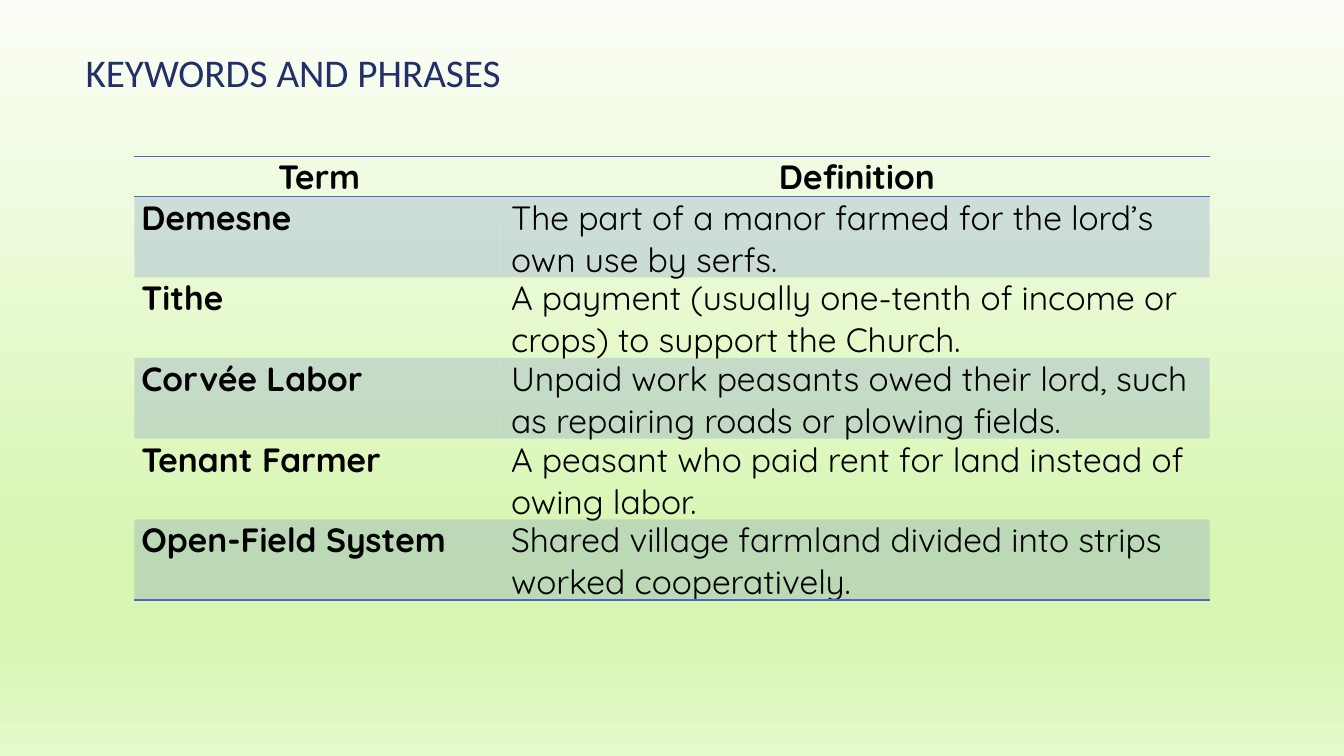
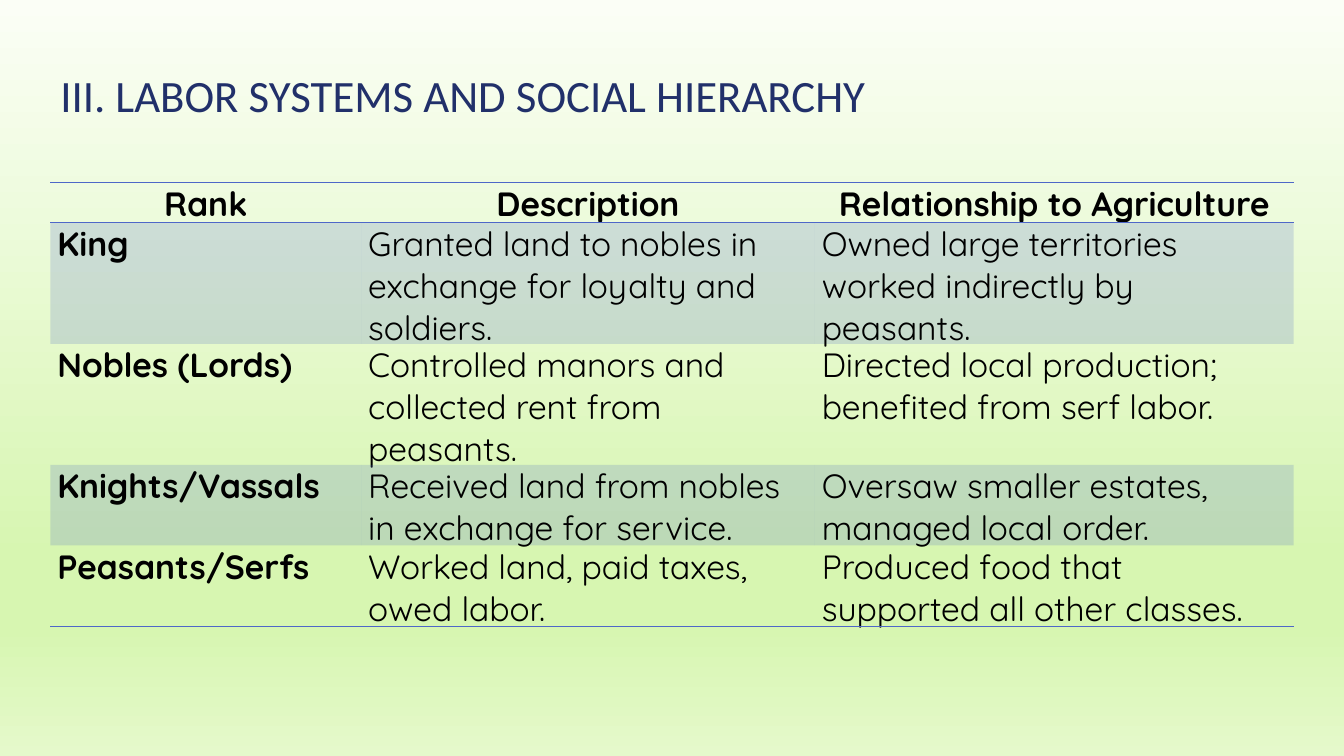
from copy import deepcopy

from lxml.etree import SubElement
from pptx import Presentation
from pptx.dml.color import RGBColor
from pptx.enum.text import MSO_ANCHOR, PP_ALIGN
from pptx.oxml.ns import qn
from pptx.util import Inches, Pt

COLORS = {
    "title": "21306A",
    "text": "000000",
    "accent": "4E67C8",
    "mist": "FBFEF6",
    "lime": "D7F6B1",
    "pale": "E5F9CB",
}
BACKDROP_STOPS = [(0, "mist"), (74, "lime"), (83, "lime"), (100, "pale")]
TITLE_FONT, TABLE_FONT = "Calibri", "Quicksand"
TABLE_SIZE = 24
BAND_OPACITY = 20
PLAIN_TABLE_STYLE = "{2D5ABB26-0587-4C30-8999-92F81FD0307C}"

# The slide is a grid of square units, twelve to the inch.
GRID_COLUMNS, GRID_ROWS = 160, 90
LINE_ROWS = 4.8

KEYWORDS = [
    ("Term", "Definition"),
    ("Demesne", "The part of a manor farmed for the lord’s own use by serfs."),
    ("Tithe", "A payment (usually one-tenth of income or crops) to support the Church."),
    ("Corvée Labor", "Unpaid work peasants owed their lord, such as repairing roads or plowing fields."),
    ("Tenant Farmer", "A peasant who paid rent for land instead of owing labor."),
    ("Open-Field System", "Shared village farmland divided into strips worked cooperatively."),
]
HIERARCHY = [
    ("Rank", "Description", "Relationship to Agriculture"),
    ("King", "Granted land to nobles in exchange for loyalty and soldiers.",
     "Owned large territories worked indirectly by peasants."),
    ("Nobles (Lords)", "Controlled manors and collected rent from peasants.",
     "Directed local production; benefited from serf labor."),
    ("Knights/Vassals", "Received land from nobles in exchange for service.",
     "Oversaw smaller estates, managed local order."),
    ("Peasants/Serfs", "Worked land, paid taxes, owed labor.",
     "Produced food that supported all other classes."),
]


def units(count):
    return Inches(count / 12)


def rgb(name):
    return RGBColor.from_string(COLORS[name])


def style_run(run, font_name, size, color, bold=False):
    run.font.name = font_name
    run.font.size = Pt(size)
    run.font.color.rgb = rgb(color)
    run.font.bold = bold


def paint_backdrop(master):
    """Give every slide the same vertical gradient."""
    fill = master.background.fill
    fill.gradient()
    fill.gradient_angle = 270
    stop_list = next(master.element.iter(qn("a:gsLst")))
    for stop in list(stop_list):
        stop_list.remove(stop)
    for position, color in BACKDROP_STOPS:
        stop = SubElement(stop_list, qn("a:gs"), pos=str(position * 1000))
        SubElement(stop, qn("a:srgbClr"), val=COLORS[color])


def add_title(slide, text, box, size):
    title = slide.shapes.add_textbox(*map(units, box))
    frame = title.text_frame
    frame.word_wrap = True
    frame.vertical_anchor = MSO_ANCHOR.BOTTOM
    frame.text = text
    paragraph = frame.paragraphs[0]
    paragraph.line_spacing = 0.9
    style_run(paragraph.runs[0], TITLE_FONT, size, "title")


def add_rules(cell, sides):
    """Draw accent lines on the given sides, before the cell is filled."""
    properties = cell._tc.get_or_add_tcPr()
    for side in sides:
        line = SubElement(properties, qn(f"a:ln{side}"), w=str(Pt(1)))
        fill = SubElement(line, qn("a:solidFill"))
        SubElement(fill, qn("a:srgbClr"), val=COLORS["accent"])


def fill_cell(cell, banded):
    if not banded:
        cell.fill.background()
        return
    cell.fill.solid()
    cell.fill.fore_color.rgb = rgb("accent")
    color = next(cell._tc.tcPr.iterchildren(qn("a:solidFill")))[0]
    SubElement(color, qn("a:alpha"), val=str(BAND_OPACITY * 1000))


def write_cell(cell, text, is_header, bold):
    cell.margin_left = cell.margin_right = Inches(0.07)
    cell.margin_top = cell.margin_bottom = 0
    cell.text_frame.text = text
    paragraph = cell.text_frame.paragraphs[0]
    paragraph.alignment = PP_ALIGN.CENTER if is_header else PP_ALIGN.LEFT
    style_run(paragraph.runs[0], TABLE_FONT, TABLE_SIZE, "text", bold)


def add_banded_table(slide, rows, origin, column_widths, row_lines):
    left, top = origin
    frame = slide.shapes.add_table(
        len(rows), len(column_widths), units(left), units(top),
        units(sum(column_widths)), units(sum(row_lines) * LINE_ROWS))
    table = frame.table
    table.first_row = table.horz_banding = False
    next(table._tbl.iter(qn("a:tableStyleId"))).text = PLAIN_TABLE_STYLE

    for column, width in zip(table.columns, column_widths):
        column.width = units(width)
    for row, lines in zip(table.rows, row_lines):
        row.height = units(lines * LINE_ROWS)

    for row_index, texts in enumerate(rows):
        is_header = row_index == 0
        sides = "TB" if is_header else "B" if row_index == len(rows) - 1 else ""
        for column_index, text in enumerate(texts):
            cell = table.cell(row_index, column_index)
            write_cell(cell, text, is_header, is_header or column_index == 0)
            add_rules(cell, sides)
            fill_cell(cell, row_index % 2 == 1)


def add_table_slide(presentation, title, title_box, title_size, **table):
    slide = presentation.slides.add_slide(presentation.slide_layouts[6])
    add_title(slide, title, title_box, title_size)
    add_banded_table(slide, **table)


def main():
    presentation = Presentation()
    presentation.slide_width = units(GRID_COLUMNS)
    presentation.slide_height = units(GRID_ROWS)
    paint_backdrop(presentation.slide_master)
    add_table_slide(
        presentation, "KEYWORDS AND PHRASES", (9, 2.64, 128, 9.36), 28,
        rows=KEYWORDS, origin=(16, 18.6),
        column_widths=(44, 84), row_lines=(1, 2, 2, 2, 2, 2))
    add_table_slide(
        presentation, "III. LABOR SYSTEMS AND SOCIAL HIERARCHY", (6, 5.28, 128, 9.84), 32,
        rows=HIERARCHY, origin=(6, 21.72),
        column_widths=(37, 54, 57), row_lines=(1, 3, 3, 2, 2))
    presentation.save("out.pptx")


if __name__ == "__main__":
    main()
